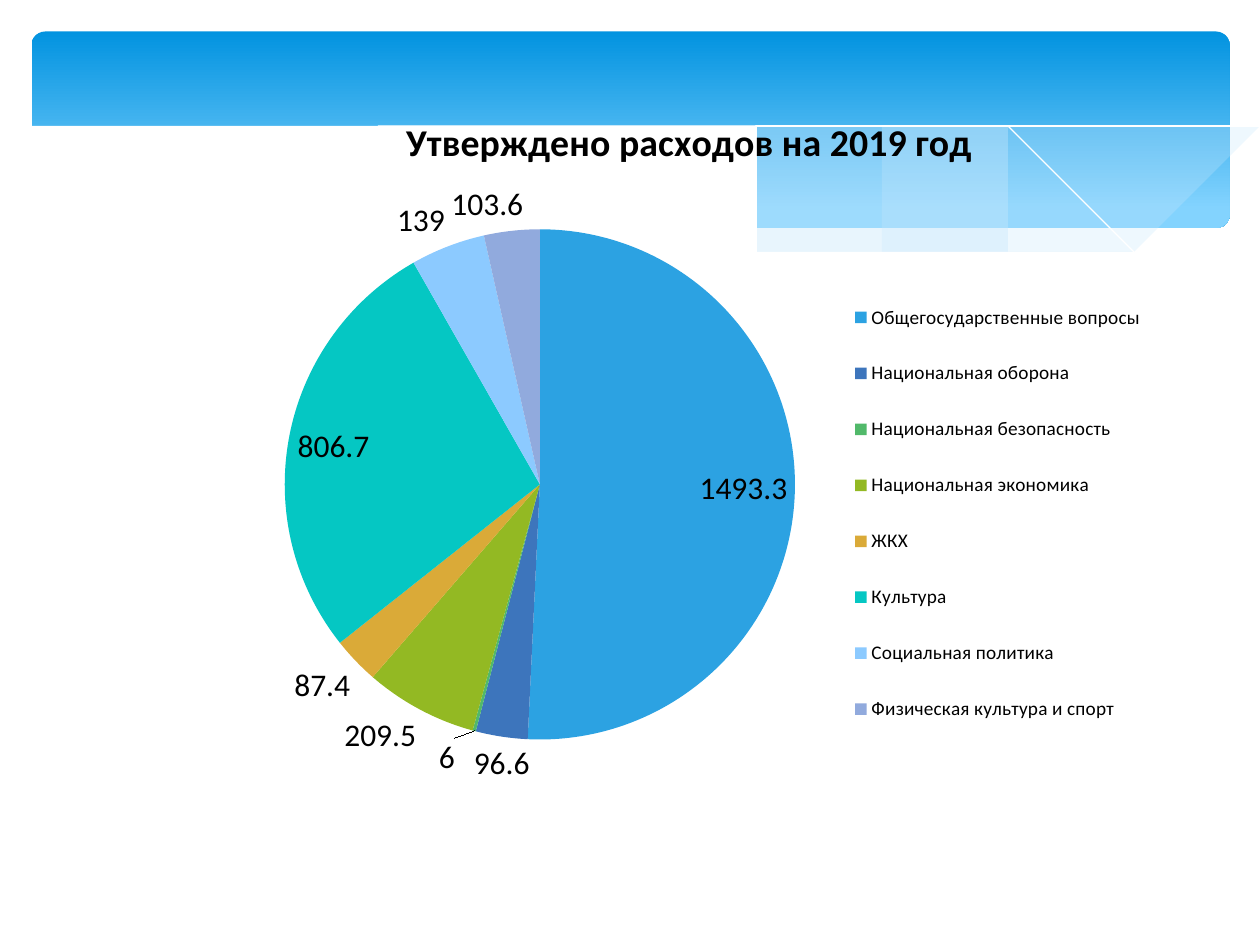
"""Build a slide with a wave banner and a pie chart of approved spending for 2019."""
from lxml.etree import SubElement as Sub
from pptx import Presentation
from pptx.chart.data import CategoryChartData as Data
from pptx.dml.color import RGBColor as Rgb
from pptx.enum.chart import XL_CHART_TYPE as Kind, XL_LABEL_POSITION as Spot, XL_LEGEND_POSITION as Side
from pptx.enum.shapes import MSO_SHAPE as Form
from pptx.oxml import parse_xml
from pptx.oxml.ns import nsdecls, qn
from pptx.util import Inches, Pt

TITLE = "Утверждено расходов на 2019 год"
COSTS = [
    ("Общегосударственные вопросы", 1493.3, "2CA2E2"),
    ("Национальная оборона", 96.6, "3D75BC"),
    ("Национальная безопасность", 6, "51B96A"),
    ("Национальная экономика", 209.5, "93B923"),
    ("ЖКХ", 87.4, "DAAA38"),
    ("Культура", 806.7, "05C7C3"),
    ("Социальная политика", 139, "8CCAFF"),
    ("Физическая культура и спорт", 103.6, "91AADD"),
]
THEME = dict(font="Calibri", ink="000000", white="FFFFFF", mist="C6E7FC",
             top="0293E0", base="83D3FE", title=21.6, label=18, legend=11)
BOX = (1.67, 0.6, 7.51, 5.75)
PIE = (2.26, 1.82, 4.05, 4.05)
KEY = (6.71, 2.17, 2.42, 3.81)
HEAD = (3.17, 0.86, 4.5, 0.37)
WAVES = [
    dict(fill="mist", alpha=29, curves=[
        [(9.76, 0.94), (9.21, 1.04), (8.61, 1.18), (7.79, 1.37), (7.06, 1.52), (6.61, 1.6)],
        [(6.61, 1.6), (7.19, 1.67), (7.81, 1.72), (8.35, 1.72), (8.81, 1.67), (9.35, 1.56), (9.76, 1.41)]]),
    dict(fill="mist", alpha=40, curves=[
        [(8.93, 1.67), (8.37, 1.59), (7.41, 1.42), (6.29, 1.16), (5.41, 0.97), (4.65, 0.86),
         (3.8, 0.8), (3.28, 0.81), (2.86, 0.86)],
        [(2.86, 0.86), (3.62, 0.97), (4.49, 1.16), (5.66, 1.43), (6.5, 1.58), (7.22, 1.68),
         (7.85, 1.72), (8.38, 1.72), (8.93, 1.67)]]),
    dict(line="white", curves=[
        [(3.09, 0.9), (3.44, 0.84), (4.16, 0.81), (5.1, 0.86), (6.08, 0.98), (6.95, 1.14),
         (7.95, 1.36), (9.07, 1.66)]]),
    dict(line="white", curves=[
        [(6.13, 1.51), (6.72, 1.35), (7.48, 1.17), (8.36, 0.99), (9.1, 0.86), (9.75, 0.8)]]),
    dict(fill="white", curves=[
        [(9.77, 1.41), (9.3, 1.57), (8.75, 1.67), (8.09, 1.71), (7.44, 1.68), (6.68, 1.6),
         (5.79, 1.44), (4.47, 1.14), (3.4, 0.92), (2.5, 0.81), (1.77, 0.78), (1.19, 0.82),
         (0.67, 0.91), (0.4, 1), (0.23, 1.07)],
        [(0.23, 2.24), (9.77, 2.24)]]),
]


def tint(name):
    return Rgb.from_string(THEME.get(name, name))


def style(font, size, bold=False, color="ink"):
    font.name, font.size, font.bold = THEME["font"], Pt(THEME[size]), bold
    font.color.rgb = tint(color)


def write(frame, text, **fmt):
    frame.text = text
    style(frame.paragraphs[0].runs[0].font, **fmt)


def bend(knots, steps=5):
    if len(knots) < 3:
        return knots
    pad = [knots[0], *knots, knots[-1]]
    dots = [knots[0]]
    for a, b, c, d in zip(pad, pad[1:], pad[2:], pad[3:]):
        for n in range(1, steps + 1):
            t = n / steps
            dots.append(tuple(
                (2 * q + (r - p) * t + (2 * p - 5 * q + 4 * r - s) * t ** 2
                 + (3 * q - p - 3 * r + s) * t ** 3) / 2
                for p, q, r, s in zip(a, b, c, d)))
    return dots


def wave(slide, curves, fill=None, line=None, alpha=100):
    dots = [dot for curve in curves for dot in bend(curve)]
    pen = slide.shapes.build_freeform(*dots[0], scale=Inches(1))
    pen.add_line_segments(dots[1:], close=bool(fill))
    shape = pen.convert_to_shape()
    shape.shadow.inherit = False
    if fill:
        shape.fill.solid()
        shape.fill.fore_color.rgb = tint(fill)
        shape.line.fill.background()
        tone = shape.element.spPr.find(".//" + qn("a:srgbClr"))
        Sub(tone, qn("a:alpha")).set("val", str(alpha * 1000))
    else:
        shape.fill.background()
        shape.line.color.rgb = tint(line)
        shape.line.width = Pt(0)


def banner(slide):
    shape = slide.shapes.add_shape(Form.ROUNDED_RECTANGLE, *map(Inches, (0.25, 0.25, 9.51, 1.56)))
    shape.adjustments[0] = 0.07
    shape.shadow.inherit = False
    shape.line.fill.background()
    shape.fill.gradient()
    shape.fill.gradient_angle = 270
    for stop, name, place in zip(shape.fill.gradient_stops, ("top", "base"), (0, 0.9)):
        stop.color.rgb, stop.position = tint(name), place
    for item in WAVES:
        wave(slide, **item)


def place(node, area, index, inner=False, sized=True):
    for old in node.findall(qn("c:layout")):
        node.remove(old)
    layout = parse_xml(f"<c:layout {nsdecls('c')}><c:manualLayout/></c:layout>")
    x, y, w, h = area
    left, top, wide, high = BOX
    parts = [("layoutTarget", "inner")] if inner else []
    parts += [("xMode", "edge"), ("yMode", "edge"),
              ("x", (x - left) / wide), ("y", (y - top) / high)]
    if sized:
        parts += [("w", w / wide), ("h", h / high)]
    for tag, val in parts:
        Sub(layout[0], qn("c:" + tag)).set("val", str(val))
    node.insert(index, layout)


def pie(slide):
    data = Data()
    data.categories = [name for name, _, _ in COSTS]
    data.add_series("Series 1", [cost for _, cost, _ in COSTS])
    chart = slide.shapes.add_chart(Kind.PIE, *map(Inches, BOX), data).chart
    style(chart.font, "label")
    chart.has_title = True
    write(chart.chart_title.text_frame, TITLE, size="title", bold=True)
    chart.has_legend = True
    legend = chart.legend
    legend.position, legend.include_in_layout = Side.RIGHT, False
    style(legend.font, "legend")
    plot = chart.plots[0]
    plot.vary_by_categories = True
    plot.has_data_labels = True
    labels = plot.data_labels
    labels.show_value, labels.show_percentage = True, False
    labels.position = Spot.BEST_FIT
    style(labels.font, "label")
    for n, (_, _, color) in enumerate(COSTS):
        fill = plot.series[0].points[n].format.fill
        fill.solid()
        fill.fore_color.rgb = tint(color)
    root = chart.element.find(qn("c:chart"))
    place(root.find(qn("c:title")), HEAD, 1, sized=False)
    place(root.find(qn("c:plotArea")), PIE, 0, inner=True)
    place(root.find(qn("c:legend")), KEY, 1)


def main():
    deck = Presentation()
    deck.slide_width, deck.slide_height = Inches(10), Inches(7.5)
    slide = deck.slides.add_slide(deck.slide_layouts[6])
    banner(slide)
    pie(slide)
    deck.save("out.pptx")


if __name__ == "__main__":
    main()
